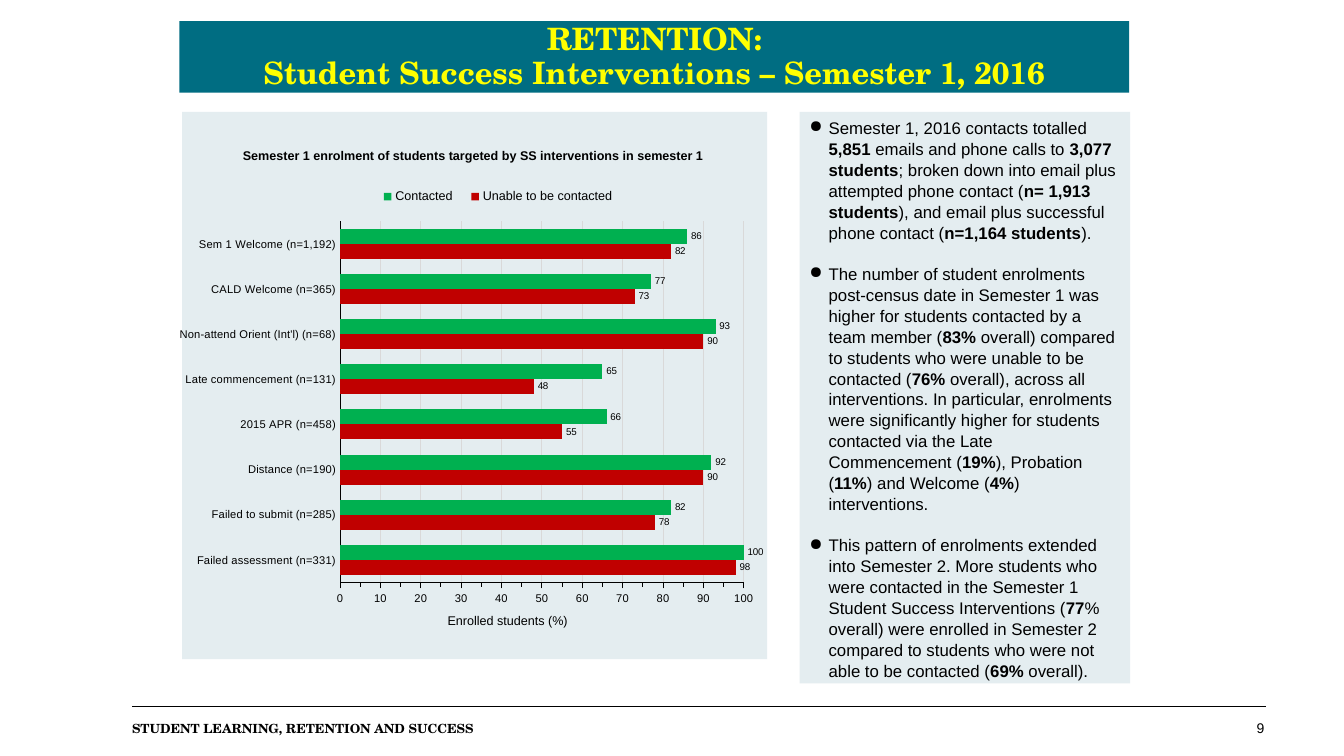
from lxml import etree
from pptx import Presentation
from pptx.chart.data import CategoryChartData
from pptx.dml.color import RGBColor
from pptx.enum.chart import XL_CHART_TYPE, XL_LABEL_POSITION, XL_LEGEND_POSITION, XL_TICK_MARK
from pptx.enum.shapes import MSO_CONNECTOR, MSO_SHAPE
from pptx.enum.text import MSO_ANCHOR, PP_ALIGN
from pptx.oxml import parse_xml
from pptx.oxml.ns import nsdecls, qn
from pptx.util import Inches, Pt

BAR = XL_CHART_TYPE.BAR_CLUSTERED
OUTSIDE_END = XL_LABEL_POSITION.OUTSIDE_END
TOP_LEGEND = XL_LEGEND_POSITION.TOP
TICK_NONE, TICK_OUT = XL_TICK_MARK.NONE, XL_TICK_MARK.OUTSIDE
STRAIGHT, RECTANGLE = MSO_CONNECTOR.STRAIGHT, MSO_SHAPE.RECTANGLE
TOP, MIDDLE = MSO_ANCHOR.TOP, MSO_ANCHOR.MIDDLE
LEFT, CENTER, RIGHT = PP_ALIGN.LEFT, PP_ALIGN.CENTER, PP_ALIGN.RIGHT
SERIF, SANS = "TeX Gyre Schola", "Arial"
PANEL, BLACK = "E4EDF0", "000000"


def style(font, size, color=BLACK, bold=False, name=SANS):
    font.size, font.bold, font.name = Pt(size), bold, name
    font.color.rgb = RGBColor.from_string(color)


def set_layout(element, index, target=None, **fractions):
    """Place a chart part by fractions of the chart area."""
    for old in element.findall(qn("c:layout")):
        element.remove(old)
    layout = parse_xml(f"<c:layout {nsdecls('c')}><c:manualLayout/></c:layout>")
    values = {"layoutTarget": target} if target else {}
    values.update({f"{axis}Mode": "edge" for axis in "xy"})
    values.update(fractions)
    for tag, value in values.items():
        etree.SubElement(layout[0], qn(f"c:{tag}")).set("val", str(value))
    element.insert(index, layout)


prs = Presentation()
prs.slide_width, prs.slide_height = Inches(13.33), Inches(7.5)
slide = prs.slides.add_slide(prs.slide_layouts[5])
shapes = slide.shapes

# Footer rule, section name and page number
rule = shapes.add_connector(STRAIGHT, Inches(1.31), Inches(7.01), Inches(12.56), Inches(7.01))
rule.line.width = Pt(0.5)
rule.line.color.rgb = RGBColor.from_string(BLACK)
etree.SubElement(rule.element.spPr, qn("a:effectLst"))

for left, top, width, text, align, size, bold, font_name in (
    (1.31, 7.15, 10.34, "STUDENT LEARNING, RETENTION AND SUCCESS", LEFT, 9, True, SERIF),
    (12.02, 7.14, 0.52, "9", RIGHT, 10, False, SANS),
):
    footer = shapes.add_textbox(Inches(left), Inches(top), Inches(width), Inches(0.22)).text_frame
    footer.word_wrap = True
    footer.margin_left = footer.margin_right = footer.margin_top = footer.margin_bottom = 0
    footer.paragraphs[0].alignment = align
    run = footer.paragraphs[0].add_run()
    run.text = text
    style(run.font, size, bold=bold, name=font_name)

# Title band
title = shapes.title
title.left, title.top, title.width, title.height = map(Inches, (1.78, 0.21, 9.42, 0.71))
title.fill.solid()
title.fill.fore_color.rgb = RGBColor.from_string("006D82")
title.text_frame.vertical_anchor = MIDDLE
heading = title.text_frame.paragraphs[0]
heading.alignment = CENTER
heading.line_spacing = Pt(24)
for i, line in enumerate(("RETENTION:", "Student Success Interventions – Semester 1, 2016")):
    if i:
        heading.add_line_break()
    run = heading.add_run()
    run.text = line
    style(run.font, 22, "FFFF00", True, SERIF)

# Findings panel: plain and bold runs alternate
findings = (
    ("Semester 1, 2016 contacts totalled ", "5,851", " emails and phone calls to ",
     "3,077 students", "; broken down into email plus attempted phone contact (",
     "n= 1,913 students", "), and email plus successful phone contact (",
     "n=1,164 students", ")."),
    ("The number of student enrolments post-census date in Semester 1 was higher for "
     "students contacted by a team member (", "83%",
     " overall) compared to students who were unable to be contacted (", "76%",
     " overall), across all interventions. In particular, enrolments were significantly "
     "higher for students contacted via the Late Commencement (", "19%",
     "), Probation (", "11%", ") and Welcome (", "4%", ") interventions."),
    ("This pattern of enrolments extended into Semester 2. More students who were contacted "
     "in the Semester 1 Student Success Interventions (", "77",
     "% overall) were enrolled in Semester 2 compared to students who were not able to be "
     "contacted (", "69%", " overall)."),
)
panel = shapes.add_shape(RECTANGLE, Inches(7.93), Inches(1.11), Inches(3.28), Inches(5.67))
panel.shadow.inherit = False
panel.fill.solid()
panel.fill.fore_color.rgb = RGBColor.from_string(PANEL)
panel.line.fill.background()
panel.text_frame.word_wrap = True
panel.text_frame.vertical_anchor = TOP
for i, finding in enumerate(findings):
    paragraph = panel.text_frame.add_paragraph() if i else panel.text_frame.paragraphs[0]
    properties = paragraph._p.get_or_add_pPr()
    properties.set("marL", str(Inches(0.19)))
    properties.set("indent", str(-Inches(0.19)))
    etree.SubElement(properties, qn("a:buChar")).set("char", "●")
    paragraph.alignment = LEFT
    paragraph.line_spacing = 1.04
    if i:
        paragraph.space_before = Pt(14.4)
    for j, text in enumerate(finding):
        run = paragraph.add_run()
        run.text = text
        style(run.font, 12, bold=j % 2 == 1)

# Enrolment chart
enrolment = CategoryChartData()
enrolment.categories = (
    "Failed assessment (n=331)", "Failed to submit (n=285)", "Distance (n=190)",
    "2015 APR (n=458)", "Late commencement (n=131)", "Non-attend Orient (Int'l) (n=68)",
    "CALD Welcome (n=365)", "Sem 1 Welcome (n=1,192)",
)
enrolment.add_series("Unable to be contacted", (98, 78, 90, 55, 48, 90, 73, 82))
enrolment.add_series("Contacted", (100, 82, 92, 66, 65, 93, 77, 86))
chart = shapes.add_chart(BAR, Inches(1.78), Inches(1.11), Inches(5.83), Inches(5.43), enrolment).chart
style(chart.font, 10)
chart._chartSpace.find(qn("c:chart")).addnext(parse_xml(
    f"<c:spPr {nsdecls('c', 'a')}><a:solidFill><a:srgbClr val='{PANEL}'/></a:solidFill>"
    "<a:ln><a:noFill/></a:ln></c:spPr>"))

plot = chart.plots[0]
plot.gap_width, plot.overlap = 100, 0
plot.vary_by_categories = False
for series, color in zip(plot.series, ("C00000", "00B050")):
    series.format.fill.solid()
    series.format.fill.fore_color.rgb = RGBColor.from_string(color)
    labels = series.data_labels
    labels.show_value = True
    labels.position = OUTSIDE_END
    style(labels.font, 7)

# Axes
groups, percent = chart.category_axis, chart.value_axis
for axis, tick in ((groups, TICK_NONE), (percent, TICK_OUT)):
    axis.major_tick_mark = axis.minor_tick_mark = tick
    style(axis.tick_labels.font, 8)
    axis.format.line.width = Pt(0.75)
    axis.format.line.color.rgb = RGBColor.from_string(BLACK)
percent.minimum_scale, percent.maximum_scale = 0, 100
percent.major_unit, percent.minor_unit = 10, 5
percent.major_gridlines.format.line.width = Pt(0.75)
percent.major_gridlines.format.line.color.rgb = RGBColor.from_string("D9D9D9")

# Chart title, axis title and legend
for caption, text, bold, x, y in (
    (chart.chart_title, "Semester 1 enrolment of students targeted by SS interventions in semester 1",
     True, 0.1, 0.06),
    (percent.axis_title, "Enrolled students (%)", False, 0.45, 0.91),
):
    run = caption.text_frame.paragraphs[0].add_run()
    run.text = text
    style(run.font, 9, bold=bold)
    set_layout(caption._element, 1, x=x, y=y)
chart.has_legend = True
chart.legend.position = TOP_LEGEND
chart.legend.include_in_layout = False
style(chart.legend.font, 9)
set_layout(chart.legend._element, 1, x=0.32, y=0.13, w=0.44, h=0.05)
set_layout(chart._chartSpace.chart.plotArea, 0, "inner", x=0.27, y=0.2, w=0.69, h=0.66)

prs.save("out.pptx")
